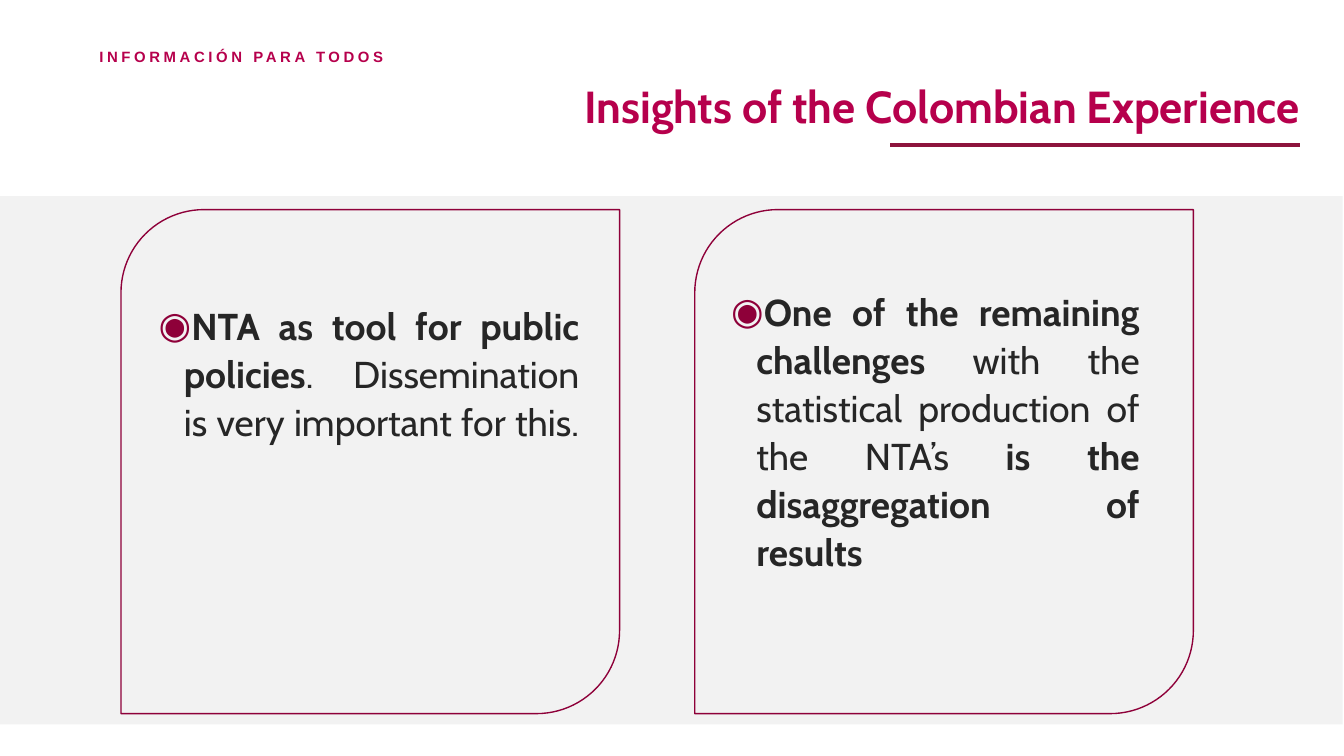
from dataclasses import dataclass

from lxml import etree
from pptx import Presentation
from pptx.dml.color import RGBColor
from pptx.enum import shapes, text
from pptx.oxml import ns
from pptx.util import Pt


@dataclass(frozen=True)
class Theme:
    pink: str = "B6004C"
    wine: str = "8E0039"
    rule: str = "8D143D"
    ink: str = "262626"
    band: str = "F2F2F2"
    head: str = "Cabin"
    label: str = "Arial"
    title: float = 24
    body: float = 20
    small: float = 8


THEME = Theme()
ALIGN = text.PP_ALIGN
FORM = shapes.MSO_SHAPE

# Each card: its left edge, its text box, and its (words, bold) runs
CARDS = [
    (64.8, (77.8, 157, 239.8, 109.4), [
        ("NTA as tool for public policies", True),
        (". Dissemination is very important for this. ", False)]),
    (372.2, (384.5, 149.8, 233.3, 161.3), [
        ("One of the remaining challenges ", True),
        ("with the statistical production of the NTA’s ", False),
        ("is the disaggregation of results", True)]),
]


def rgb(code):
    return RGBColor.from_string(code)


def place(shape, box):
    shape.left, shape.top, shape.width, shape.height = map(Pt, box)


def bullet(par, mark, color, indent):
    """Give the paragraph a coloured bullet and a hanging indent."""
    props = par._p.get_or_add_pPr()
    props.set("marL", str(Pt(indent)))
    props.set("indent", str(-Pt(indent)))
    tint = etree.SubElement(props, ns.qn("a:buClr"))
    etree.SubElement(tint, ns.qn("a:srgbClr"), val=color)
    etree.SubElement(props, ns.qn("a:buChar"), char=mark)


def write(shape, runs, size, color, font=THEME.head, align=ALIGN.LEFT,
          anchor=text.MSO_ANCHOR.TOP, inset=(7.2, 3.6), line=1.0,
          after=0, mark=None, track=0):
    """Fill a shape with one paragraph of (words, bold) runs."""
    frame = shape.text_frame
    frame.word_wrap = True
    frame.auto_size = text.MSO_AUTO_SIZE.NONE
    frame.vertical_anchor = anchor
    frame.margin_left = frame.margin_right = Pt(inset[0])
    frame.margin_top = frame.margin_bottom = Pt(inset[1])
    par = frame.paragraphs[0]
    par.alignment, par.line_spacing = align, line
    par.space_before, par.space_after = Pt(0), Pt(after)
    if mark:
        bullet(par, mark, THEME.wine, 13.5)
    for words, bold in runs:
        run = par.add_run()
        run.text = words
        run.font.name, run.font.size, run.font.bold = font, Pt(size), bold
        run.font.color.rgb = rgb(color)
        if track:
            run._r.get_or_add_rPr().set("spc", str(int(track * 100)))


def panel(slide, form, box, fill=None, edge=None):
    shape = slide.shapes.add_shape(form, *map(Pt, box))
    shape.shadow.inherit = False
    if fill:
        shape.fill.solid()
        shape.fill.fore_color.rgb = rgb(fill)
    else:
        shape.fill.background()
    if edge:
        shape.line.color.rgb = rgb(edge)
        shape.line.width = Pt(0.75)
    else:
        shape.line.fill.background()
    return shape


def rule(slide, start, end, color, width):
    line = slide.shapes.add_connector(
        shapes.MSO_CONNECTOR.STRAIGHT, *map(Pt, start + end))
    line.line.color.rgb = rgb(color)
    line.line.width = Pt(width)
    etree.SubElement(line._element.spPr, ns.qn("a:effectLst"))


def main():
    deck = Presentation()
    deck.slide_width, deck.slide_height = Pt(720), Pt(405)
    slide = deck.slides.add_slide(deck.slide_layouts.get_by_name("Two Content"))
    title, *bodies = slide.placeholders

    # Grey band, sent behind the placeholders
    band = panel(slide, FORM.RECTANGLE, (-0.7, 105.1, 720, 283), THEME.band)
    slide.shapes._spTree.insert(2, band._element)

    # Header: tracked label, title and rule
    label = slide.shapes.add_textbox(*map(Pt, (53.3, 21.6, 221, 13.7)))
    write(label, [("INFORMACIÓN PARA TODOS", True)], THEME.small, THEME.pink,
          font=THEME.label, inset=(0, 0.9), line=1.3, track=1.9)
    place(title, (229.7, 36.7, 473.8, 39.6))
    write(title, [("Insights of the Colombian Experience", True)],
          THEME.title, THEME.pink, align=ALIGN.RIGHT,
          anchor=text.MSO_ANCHOR.MIDDLE)
    rule(slide, (696.2, 77.8), (476.6, 77.8), THEME.rule, 2)

    # Two outlined cards with their lists
    for body, (left, box, runs) in zip(bodies, CARDS):
        panel(slide, FORM.ROUND_2_DIAG_RECTANGLE, (left, 112.3, 267.1, 270),
              edge=THEME.wine)
        place(body, box)
        write(body, runs, THEME.body, THEME.ink, align=ALIGN.JUSTIFY,
              line=1.07, after=8, mark="◉")

    deck.save("out.pptx")


if __name__ == "__main__":
    main()
